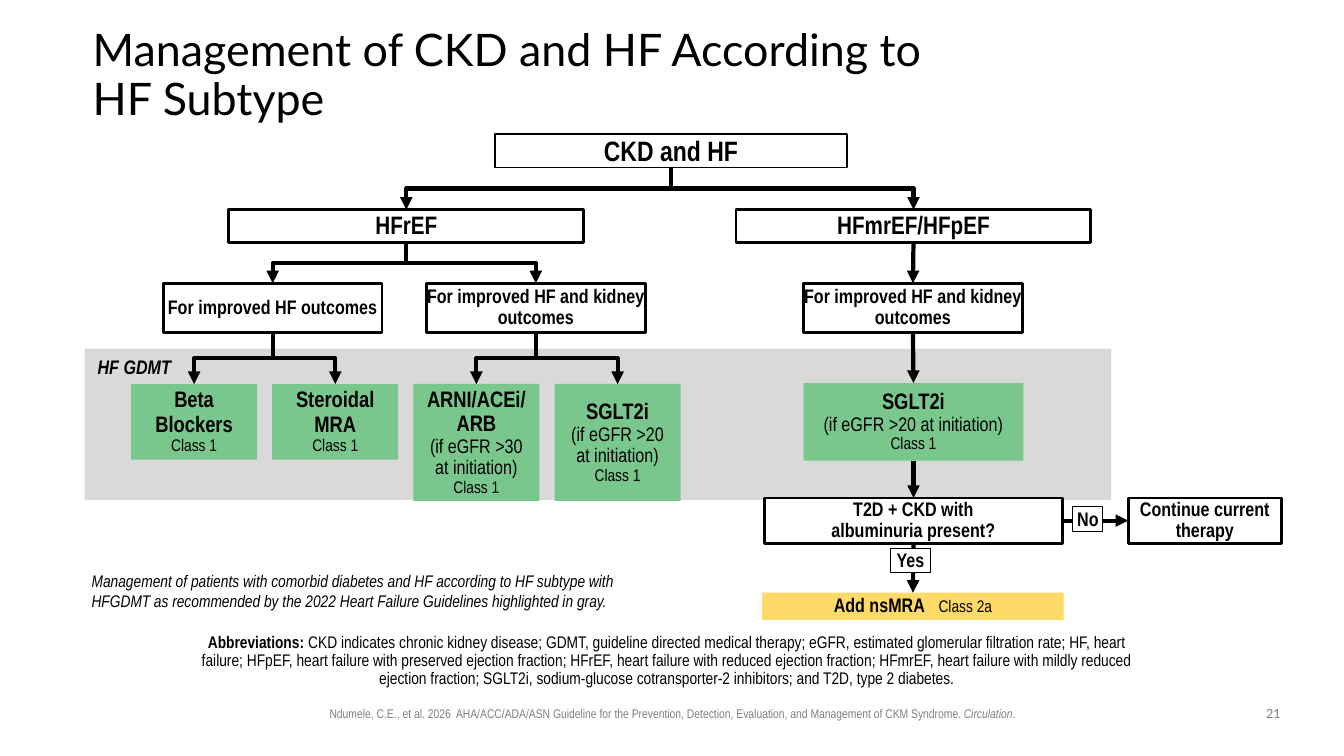
from dataclasses import dataclass
from typing import Optional

from lxml import etree
from pptx import Presentation
from pptx.dml.color import RGBColor
from pptx.enum.shapes import MSO_CONNECTOR, MSO_SHAPE
from pptx.enum.text import MSO_ANCHOR, PP_ALIGN
from pptx.oxml.ns import qn
from pptx.util import Emu, Pt

PX = 9144
RECTANGLE = MSO_SHAPE.RECTANGLE
STRAIGHT, ELBOW = MSO_CONNECTOR.STRAIGHT, MSO_CONNECTOR.ELBOW
TOP, MIDDLE, BOTTOM = MSO_ANCHOR.TOP, MSO_ANCHOR.MIDDLE, MSO_ANCHOR.BOTTOM
LEFT, CENTER = PP_ALIGN.LEFT, PP_ALIGN.CENTER
SIDE_TOP, SIDE_LEFT, SIDE_BOTTOM, SIDE_RIGHT = range(4)
COLORS = {"black": "000000", "white": "FFFFFF", "panel": "D9D9D9",
          "green": "79C78D", "yellow": "FFDA68", "footer": "808080"}
NARROW, LATO = "Arial Narrow", "Lato"
NO_INSETS, TEXT_INSETS = (0, 0, 0, 0), (10, 5, 10, 5)


@dataclass
class Span:
    text: str
    size: int
    bold: bool = False
    italic: bool = False
    spacing: int = 0


@dataclass
class Label:
    lines: list[list[Span]]
    font: str = NARROW
    color: str = "black"
    align: PP_ALIGN = CENTER
    anchor: MSO_ANCHOR = MIDDLE
    line_spacing: float = 0.9
    insets: tuple[int, int, int, int] = NO_INSETS


@dataclass
class Box:
    left: int
    top: int
    width: int
    height: int
    label: Optional[Label] = None
    fill: str = "white"
    outline: float = 0


@dataclass
class Arrow:
    start: str
    end: str
    start_side: int = SIDE_BOTTOM
    end_side: int = SIDE_TOP


def heading(size: int, *lines: str) -> Label:
    return Label([[Span(line, size, bold=True)] for line in lines])


def card(names: list[str], note: str = "") -> Label:
    lines = [[Span(name, 16, bold=True)] for name in names]
    if note:
        lines.append([Span(note, 14)])
    return Label(lines + [[Span("Class 1", 12)]], insets=TEXT_INSETS)


def tag(text: str) -> Label:
    return Label([[Span(text, 14, bold=True)]], anchor=TOP, line_spacing=1.0)


def color(name: str) -> RGBColor:
    return RGBColor.from_string(COLORS[name])


def format_run(run, span: Span, label: Label) -> None:
    run.font.size, run.font.name = Pt(span.size), label.font
    run.font.bold, run.font.italic = span.bold, span.italic
    run.font.color.rgb = color(label.color)
    if span.spacing:
        run.font._element.set("spc", str(span.spacing))


def write(shape, label: Label) -> None:
    frame = shape.text_frame
    frame.word_wrap, frame.vertical_anchor = True, label.anchor
    (frame.margin_left, frame.margin_top,
     frame.margin_right, frame.margin_bottom) = (Emu(inset * PX) for inset in label.insets)
    frame.text = "\n".join(spans[0].text for spans in label.lines)
    for paragraph, spans in zip(frame.paragraphs, label.lines):
        paragraph.alignment, paragraph.line_spacing = label.align, label.line_spacing
        for run in paragraph.runs:
            format_run(run, spans[0], label)
        for span in spans[1:]:
            run = paragraph.add_run()
            run.text = span.text
            format_run(run, span, label)


def draw_box(slide, box: Box):
    shape = slide.shapes.add_shape(
        RECTANGLE, *(Emu(v * PX) for v in (box.left, box.top, box.width, box.height)))
    shape.shadow.inherit = False
    shape.fill.solid()
    shape.fill.fore_color.rgb = color(box.fill)
    if box.outline:
        shape.line.color.rgb = color("black")
        shape.line.width = Pt(box.outline)
    else:
        shape.line.fill.background()
    if box.label:
        write(shape, box.label)
    return shape


def draw_text(slide, box: Box) -> None:
    shape = slide.shapes.add_textbox(
        *(Emu(v * PX) for v in (box.left, box.top, box.width, box.height)))
    write(shape, box.label)


def turn_elbow(connector) -> None:
    start_x, start_y = connector.begin_x, connector.begin_y
    end_x, end_y = connector.end_x, connector.end_y
    drop, reach = end_y - start_y, abs(end_x - start_x)
    connector.left = Emu((start_x + end_x - drop) // 2)
    connector.top = Emu((start_y + end_y - reach) // 2)
    connector.width, connector.height = Emu(drop), Emu(reach)
    transform = connector._element.spPr.find(qn("a:xfrm"))
    transform.attrib.clear()
    transform.set("rot", "5400000" if end_x < start_x else "16200000")
    if end_x > start_x:
        transform.set("flipH", "1")


def draw_arrow(slide, arrow: Arrow, shapes: dict, boxes: dict[str, Box]) -> None:
    start, end = boxes[arrow.start], boxes[arrow.end]
    offset = abs(2 * start.left + start.width - 2 * end.left - end.width)
    is_elbow = arrow.start_side == SIDE_BOTTOM and offset > 4
    connector = slide.shapes.add_connector(ELBOW if is_elbow else STRAIGHT, 0, 0, 0, 0)
    connector.begin_connect(shapes[arrow.start], arrow.start_side)
    connector.end_connect(shapes[arrow.end], arrow.end_side)
    if is_elbow:
        turn_elbow(connector)
    connector.line.color.rgb = color("black")
    connector.line.width = Pt(3)
    line = connector.line._get_or_add_ln()
    etree.SubElement(line, qn("a:tailEnd"), type="triangle")
    etree.SubElement(connector._element.spPr, qn("a:effectLst"))


CARD_LEFT, CARD_STEP, CARD_TOP, CARD_WIDTH = 130, 140, 381, 125
CARDS = {
    "beta": (75, card(["Beta Blockers"])),
    "steroidal": (75, card(["Steroidal MRA"])),
    "arni": (116, card(["ARNI/ACEi/", "ARB"], "(if eGFR >30 at initiation)")),
    "sglt2i": (116, card(["SGLT2i"], "(if eGFR >20 at initiation)")),
}
KIDNEY = heading(14, "For improved HF and kidney outcomes")
BOXES = {
    "root": Box(491, 133, 349, 33, Label([[Span("CKD and HF", 20, bold=True)]],
                                         line_spacing=1.0, insets=TEXT_INSETS), outline=1),
    "reduced": Box(227, 208, 352, 33, heading(18, "HFrEF"), outline=2),
    "preserved": Box(730, 208, 352, 33, heading(18, "HFmrEF/HFpEF"), outline=2),
    "outcomes": Box(162, 281, 217, 49, heading(14, "For improved HF outcomes"), outline=2),
    "kidney": Box(423, 281, 217, 49, KIDNEY, outline=2),
    "preserved_kidney": Box(797, 281, 217, 49, KIDNEY, outline=2),
    "preserved_sglt2i": Box(797, 380, 218, 77,
                            card(["SGLT2i"], "(if eGFR >20 at initiation)"), "green"),
    "question": Box(758, 494, 296, 45,
                    heading(14, "T2D + CKD with", "albuminuria present?"), outline=2),
    "continue": Box(1119, 494, 152, 45, heading(14, "Continue current therapy"), outline=2),
    "nsmra": Box(756, 588, 299, 27,
                 Label([[Span("Add nsMRA", 14, bold=True), Span(" ", 14, spacing=640),
                         Span("Class 2a", 12)]], insets=TEXT_INSETS), "yellow"),
}
for index, (name, (height, label)) in enumerate(CARDS.items()):
    BOXES[name] = Box(CARD_LEFT + index * CARD_STEP, CARD_TOP, CARD_WIDTH, height, label, "green")

BRANCHES = {
    "root": ["reduced", "preserved"],
    "reduced": ["outcomes", "kidney"],
    "outcomes": ["beta", "steroidal"],
    "kidney": ["arni", "sglt2i"],
    "preserved": ["preserved_kidney"],
    "preserved_kidney": ["preserved_sglt2i"],
    "preserved_sglt2i": ["question"],
    "question": ["nsmra"],
}
ARROWS = [Arrow(parent, child) for parent, children in BRANCHES.items() for child in children]
ARROWS.append(Arrow("question", "continue", SIDE_RIGHT, SIDE_LEFT))
PANEL = Box(84, 346, 1018, 150, fill="panel")
TAGS = [Box(1064, 503, 30, 24, tag("No"), outline=0.75),
        Box(883, 544, 40, 24, tag("Yes"), outline=0.75)]
TEXTS = [
    Box(92, 40, 1150, 72, Label([[Span("Management of CKD and HF According to \vHF Subtype", 32)]],
                                LATO, align=LEFT)),
    Box(87, 347, 173, 34, Label([[Span("HF GDMT", 14, bold=True, italic=True)]],
                                align=LEFT, anchor=TOP, line_spacing=1.0, insets=TEXT_INSETS)),
    Box(81, 561, 596, 50, Label([[Span(
        "Management of patients with comorbid diabetes and HF according to HF subtype with HFGDMT "
        "as recommended by the 2022 Heart Failure Guidelines highlighted in gray.",
        12, italic=True)]], align=LEFT, anchor=TOP, line_spacing=1.0, insets=TEXT_INSETS)),
    Box(188, 642, 957, 46, Label([[Span("Abbreviations: ", 12, bold=True), Span(
        "CKD indicates chronic kidney disease; GDMT, guideline directed medical therapy; eGFR, "
        "estimated glomerular filtration rate; HF, heart failure; HFpEF, heart failure with "
        "preserved ejection fraction; HFrEF, heart failure with reduced ejection fraction; HFmrEF, "
        "heart failure with mildly reduced ejection fraction; SGLT2i, sodium-glucose "
        "cotransporter-2 inhibitors; and T2D, type 2 diabetes.", 12)]],
        anchor=BOTTOM, insets=(0, 5, 10, 5))),
    Box(236, 695, 862, 25, Label([[Span(
        "Ndumele, C.E., et al. 2026  AHA/ACC/ADA/ASN Guideline for the Prevention, Detection, "
        "Evaluation, and Management of CKM Syndrome. ", 9),
        Span("Circulation", 9, italic=True), Span(".", 9)]],
        color="footer", anchor=TOP, line_spacing=1.0, insets=TEXT_INSETS)),
    Box(1242, 695, 42, 26, Label([[Span("21", 9)]], LATO, "footer", anchor=TOP,
                                 line_spacing=1.0, insets=TEXT_INSETS)),
]


def main() -> None:
    presentation = Presentation()
    presentation.slide_width, presentation.slide_height = Emu(1333 * PX), Emu(750 * PX)
    slide = presentation.slides.add_slide(presentation.slide_layouts[6])
    draw_box(slide, PANEL)
    shapes = {name: draw_box(slide, box) for name, box in BOXES.items()}
    for arrow in ARROWS:
        draw_arrow(slide, arrow, shapes, BOXES)
    for box in TAGS:
        draw_box(slide, box)
    for box in TEXTS:
        draw_text(slide, box)
    presentation.save("out.pptx")


if __name__ == "__main__":
    main()
